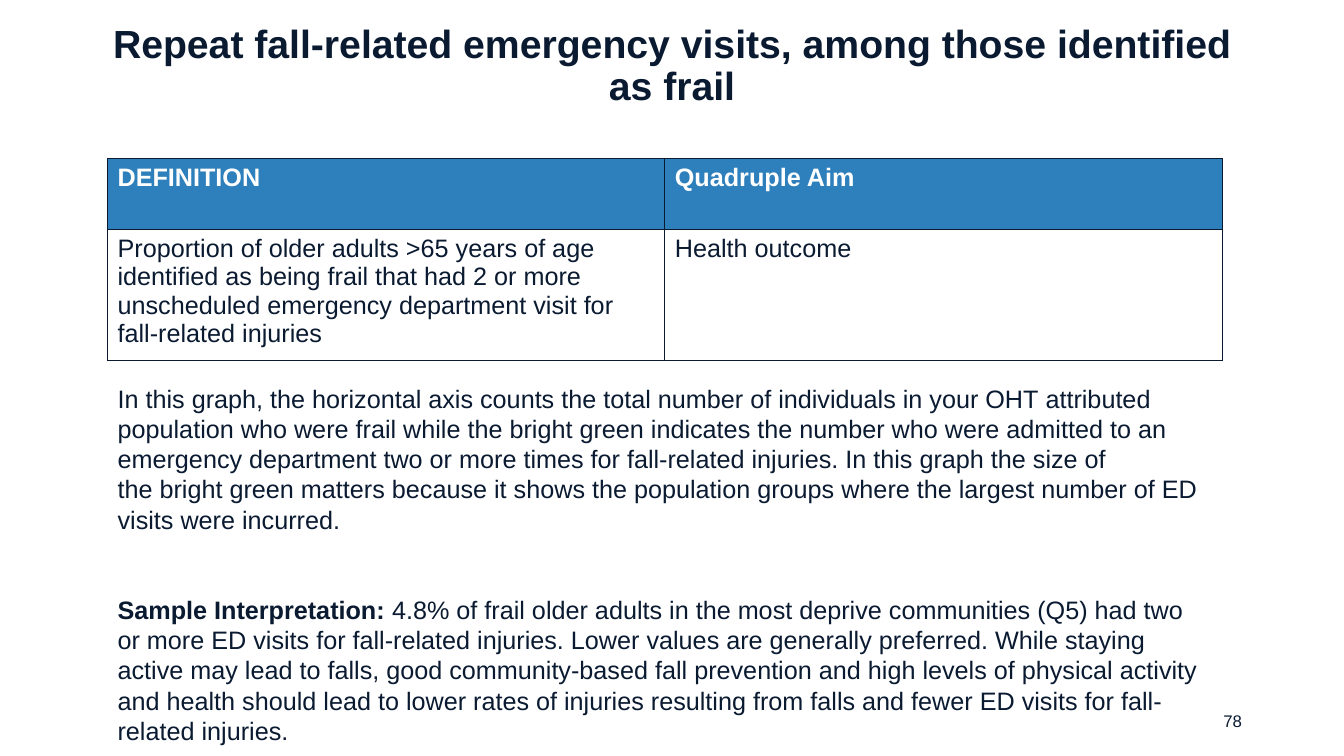
from dataclasses import dataclass

from lxml.etree import SubElement
from pptx import Presentation
from pptx.dml.color import RGBColor as RGB
from pptx.enum.text import MSO_ANCHOR as Anchor, MSO_AUTO_SIZE as AutoSize, PP_ALIGN as Align
from pptx.oxml.ns import qn
from pptx.util import Cm, Pt


@dataclass(frozen=True)
class Theme:
    font: str = "Arial"
    ink: str = "0A1A31"
    header: str = "2E80BC"
    paper: str = "FFFFFF"
    title: int = 28
    body: int = 18
    number: int = 12


T = Theme()
NBSP = chr(160)

TITLE = "Repeat fall-related emergency visits, among those identified as frail"
DEFINITION = [
    ["DEFINITION", "Quadruple Aim"],
    ["Proportion of older adults >65 years of age identified as being frail that had "
     "2 or more unscheduled emergency department visit for fall-related injuries",
     "Health outcome"],
]
EXPLANATION = [
    [("In this graph, the horizontal axis counts the total number of individuals in "
      f"your{NBSP}OHT{NBSP}attributed population who were frail while the bright green indicates "
      "the number who were admitted to an emergency department two or more times for "
      f"fall-related injuries. In this graph the size of the{NBSP}bright green matters because it "
      f"shows the population groups where the{NBSP}largest number of ED visits were incurred.",
      False)],
    [("Sample Interpretation: ", True),
     ("4.8% of frail older adults in the most deprive communities (Q5) had two or more ED visits "
      "for fall-related injuries. Lower values are generally preferred. While staying active may "
      "lead to falls, good community-based fall prevention and high levels of physical activity "
      "and health should lead to lower rates of injuries resulting from falls and fewer ED visits "
      "for fall-related injuries.", False)],
]


def add_run(p, text, size, color=T.ink, bold=False):
    r = p.add_run()
    r.text = text
    f = r.font
    f.name, f.size, f.bold = T.font, Pt(size), bold
    f.color.rgb = RGB.from_string(color)


def place(sp, box, anchor):
    """Move a text shape to its box and return its wrapped text frame."""
    sp.left, sp.top, sp.width, sp.height = box
    tf = sp.text_frame
    tf.word_wrap, tf.auto_size, tf.vertical_anchor = True, AutoSize.NONE, anchor
    return tf


def fill_title(sp, box):
    p = place(sp, box, Anchor.MIDDLE).paragraphs[0]
    p.alignment, p.line_spacing = Align.CENTER, 0.9
    add_run(p, TITLE, T.title, bold=True)


def border_cell(cell):
    pr = cell._tc.get_or_add_tcPr()
    for i, side in enumerate(("lnL", "lnR", "lnT", "lnB")):
        ln = pr.makeelement(qn(f"a:{side}"), {"w": str(Pt(1))})
        fill = SubElement(ln, qn("a:solidFill"))
        SubElement(fill, qn("a:srgbClr"), val=T.ink)
        pr.insert(i, ln)


def add_definition(s, box, header_height):
    left, top, width, height = box
    table = s.shapes.add_table(2, 2, left, top, width, height).table
    table.rows[0].height = header_height
    table.rows[1].height = height - header_height
    for i, row in enumerate(DEFINITION):
        is_header = i == 0
        for j, text in enumerate(row):
            cell = table.cell(i, j)
            cell.fill.solid()
            cell.fill.fore_color.rgb = RGB.from_string(T.header if is_header else T.paper)
            border_cell(cell)
            p = cell.text_frame.paragraphs[0]
            add_run(p, text, T.body, T.paper if is_header else T.ink, is_header)


def fill_explanation(sp, box):
    tf = place(sp, box, Anchor.TOP)
    for i, runs in enumerate(EXPLANATION):
        p = tf.add_paragraph() if i else tf.paragraphs[0]
        p.line_spacing = 1.0
        p.space_before = Pt(43 if i else 0)
        pr = p._p.get_or_add_pPr()
        pr.set("marL", "0")
        pr.set("indent", "0")
        SubElement(pr, qn("a:buNone"))
        for text, bold in runs:
            add_run(p, text, T.body, bold=bold)


def add_number(s, box):
    p = place(s.shapes.add_textbox(*box), box, Anchor.MIDDLE).paragraphs[0]
    p.alignment = Align.RIGHT
    add_run(p, "78", T.number)


def add_indicator_slide(prs):
    s = prs.slides.add_slide(prs.slide_layouts[1])
    left, width = Cm(2.71), Cm(28.09)
    fill_title(s.shapes.title, (Cm(1.95), Cm(0.61), Cm(29.97), Cm(2.13)))
    add_definition(s, (left, Cm(4), width, Cm(5.08)), Cm(1.79))
    fill_explanation(s.placeholders[1], (left, Cm(9.52), width, Cm(9.5)))
    add_number(s, (Cm(23.93), Cm(17.65), Cm(7.62), Cm(1.02)))


def main():
    prs = Presentation()
    prs.slide_width, prs.slide_height = Cm(33.87), Cm(19.05)
    add_indicator_slide(prs)
    prs.save("out.pptx")


if __name__ == "__main__":
    main()
